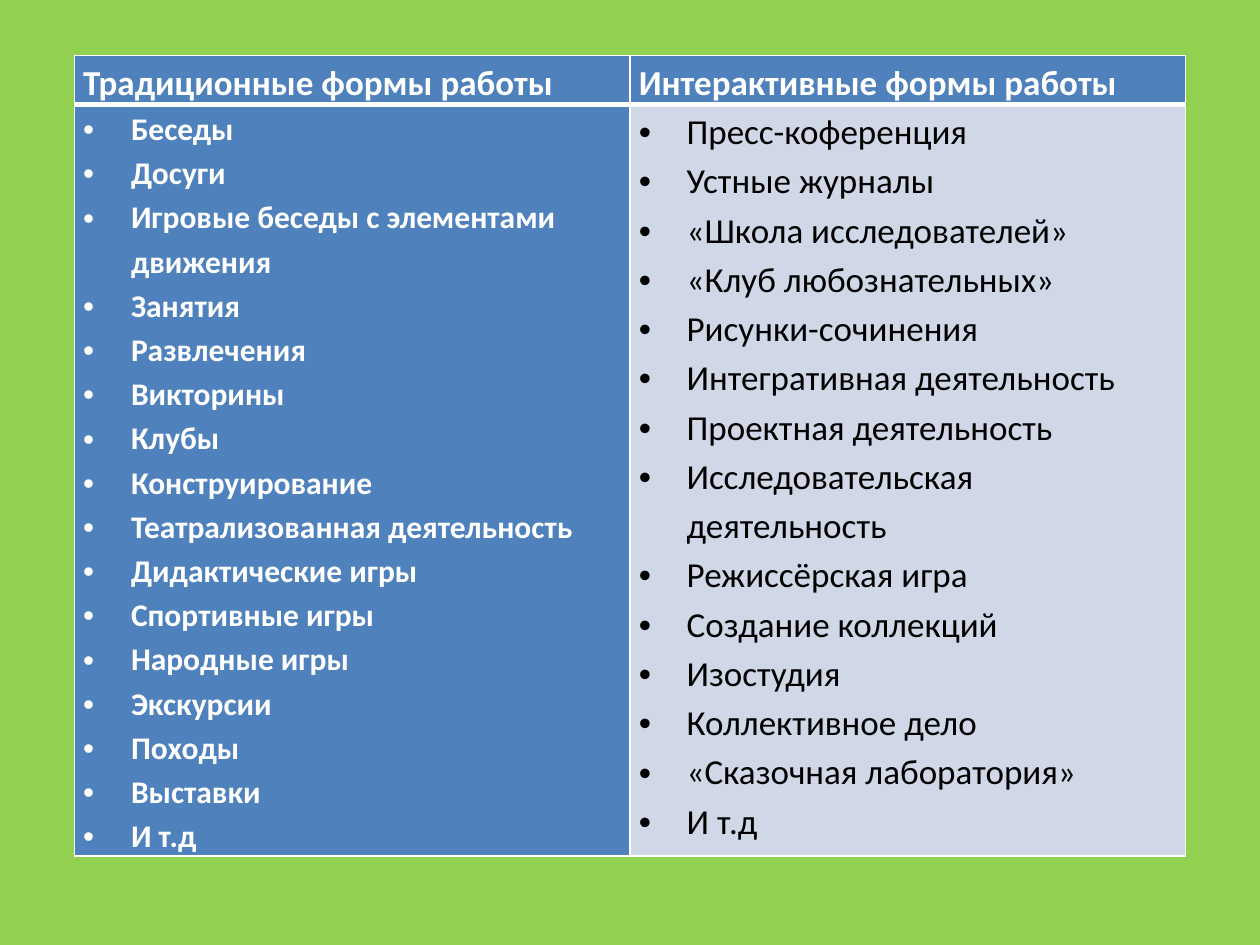
from dataclasses import dataclass

from lxml.etree import SubElement
from pptx import Presentation
from pptx.dml.color import RGBColor
from pptx.oxml.ns import qn
from pptx.util import Inches, Pt

GREEN = RGBColor(0x92, 0xD0, 0x50)
BLUE = RGBColor(0x4F, 0x81, 0xBD)
PALE_BLUE = RGBColor(0xD0, 0xD8, 0xE8)
WHITE = RGBColor(0xFF, 0xFF, 0xFF)
BLACK = RGBColor(0, 0, 0)

FONT = "Calibri"
INDENT = Inches(0.38)
THIN, THICK = Pt(1), Pt(3)


@dataclass
class WorkForms:
    heading: str
    items: list[str]
    size: int
    color: RGBColor
    fill: RGBColor
    bold: bool


COLUMNS = [
    WorkForms(
        "Традиционные формы работы",
        ["Беседы", "Досуги", "Игровые беседы с элементами движения", "Занятия",
         "Развлечения", "Викторины", "Клубы", "Конструирование",
         "Театрализованная деятельность", "Дидактические игры",
         "Спортивные игры", "Народные игры", "Экскурсии", "Походы",
         "Выставки", "И т.д"],
        size=18, color=WHITE, fill=BLUE, bold=True),
    WorkForms(
        "Интерактивные формы работы",
        ["Пресс-коференция", "Устные журналы", "«Школа исследователей»",
         "«Клуб любознательных»", "Рисунки-сочинения",
         "Интегративная деятельность", "Проектная деятельность",
         "Исследовательская деятельность", "Режиссёрская игра",
         "Создание коллекций", "Изостудия", "Коллективное дело",
         "«Сказочная лаборатория»", "И т.д"],
        size=20, color=BLACK, fill=PALE_BLUE, bold=False),
]


def add_bullet(para) -> None:
    properties = para._p.get_or_add_pPr()
    properties.set("marL", str(INDENT))
    properties.set("indent", str(-INDENT))
    SubElement(properties, qn("a:buFont")).set("typeface", "Arial")
    SubElement(properties, qn("a:buChar")).set("char", "•")


def write_lines(cell, lines: list[str], *, size: int, color: RGBColor,
                bold: bool, bullets: bool = False) -> None:
    frame = cell.text_frame
    for index, line in enumerate(lines):
        para = frame.add_paragraph() if index else frame.paragraphs[0]
        para.line_spacing = 1.15
        if bullets:
            add_bullet(para)
        span = para.add_run()
        span.text = line
        span.font.name = FONT
        span.font.size = Pt(size)
        span.font.bold = bold
        span.font.color.rgb = color


def style_cell(cell, fill: RGBColor, *, top: int = THIN, bottom: int = THIN) -> None:
    cell.margin_left = cell.margin_right = Inches(0.07)
    cell.margin_top = cell.margin_bottom = 0
    # Borders come before the fill in the cell properties
    properties = cell._tc.get_or_add_tcPr()
    for side, width in (("L", THIN), ("R", THIN), ("T", top), ("B", bottom)):
        line = SubElement(properties, qn(f"a:ln{side}"), w=str(width))
        paint = SubElement(line, qn("a:solidFill"))
        SubElement(paint, qn("a:srgbClr"), val=str(WHITE))
    cell.fill.solid()
    cell.fill.fore_color.rgb = fill


def main() -> None:
    deck = Presentation()
    deck.slide_width, deck.slide_height = Inches(10), Inches(7.5)
    page = deck.slides.add_slide(deck.slide_layouts[6])
    page.background.fill.solid()
    page.background.fill.fore_color.rgb = GREEN

    # Table of the two kinds of work
    table = page.shapes.add_table(2, len(COLUMNS), Inches(0.59), Inches(0.44),
                                  Inches(8.82), Inches(6.26)).table
    table.rows[0].height = Inches(0.35)
    table.rows[1].height = Inches(5.91)

    for index, forms in enumerate(COLUMNS):
        table.columns[index].width = Inches(4.41)
        # Heading
        heading = table.cell(0, index)
        style_cell(heading, BLUE, bottom=THICK)
        write_lines(heading, [forms.heading], size=20, color=WHITE, bold=True)
        # List
        body = table.cell(1, index)
        style_cell(body, forms.fill, top=THICK)
        write_lines(body, forms.items, size=forms.size, color=forms.color,
                    bold=forms.bold, bullets=True)

    deck.save("out.pptx")


if __name__ == "__main__":
    main()
